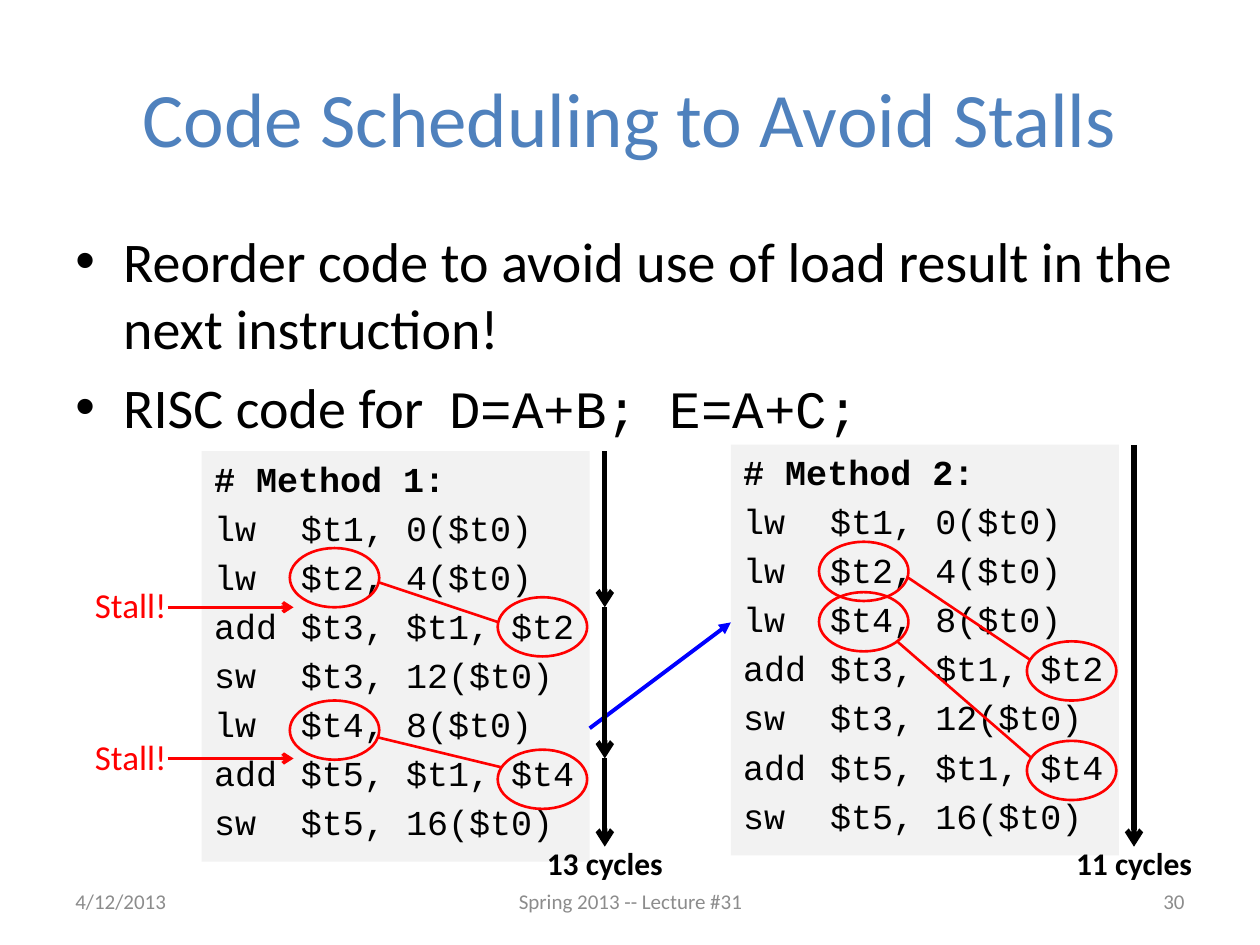
from dataclasses import dataclass

from lxml import etree
from pptx import Presentation
from pptx.dml.color import RGBColor
from pptx.enum.shapes import MSO_CONNECTOR, MSO_SHAPE
from pptx.enum.text import MSO_ANCHOR, MSO_AUTO_SIZE, PP_ALIGN
from pptx.oxml.ns import qn
from pptx.util import Inches, Pt

STRAIGHT = MSO_CONNECTOR.STRAIGHT
RECTANGLE, OVAL = MSO_SHAPE.RECTANGLE, MSO_SHAPE.OVAL
TOP, MIDDLE = MSO_ANCHOR.TOP, MSO_ANCHOR.MIDDLE
LEFT, CENTER, RIGHT = PP_ALIGN.LEFT, PP_ALIGN.CENTER, PP_ALIGN.RIGHT
FIT_SHAPE = MSO_AUTO_SIZE.SHAPE_TO_FIT_TEXT

CELL = Inches(0.1)
COLUMNS, ROWS = 100, 75
BODY_FONT, CODE_FONT = "Calibri", "Courier New"
BLACK, RED, BLUE = "000000", "FF0000", "0000FF"
TITLE_BLUE, FOOTER_GRAY, PANEL_GRAY = "4F81BD", "8C8C8C", "F2F2F2"


@dataclass(frozen=True)
class Area:
    col: float
    row: float
    cols: float
    rows: float

    def lengths(self) -> list[int]:
        return [round(n * CELL) for n in (self.col, self.row, self.cols, self.rows)]


@dataclass(frozen=True)
class Span:
    text: str
    size: float
    color: str = BLACK
    font: str = BODY_FONT
    bold: bool = False


@dataclass(frozen=True)
class Line:
    start: tuple[float, float]
    end: tuple[float, float]
    color: str
    width: float
    head: str = ""


@dataclass(frozen=True)
class Listing:
    title: str
    col: float
    row: float
    instructions: list[str]


@dataclass(frozen=True)
class Dependency:
    load: tuple[float, float]
    use: tuple[float, float]
    start: tuple[float, float]
    end: tuple[float, float]


def rgb(color: str) -> RGBColor:
    return RGBColor.from_string(color)


def add_spans(paragraph, spans: list[Span], align=LEFT) -> None:
    paragraph.alignment = align
    for span in spans:
        run = paragraph.add_run()
        run.text = span.text
        run.font.size = Pt(span.size)
        run.font.name = span.font
        run.font.bold = span.bold
        run.font.color.rgb = rgb(span.color)


def space_before(paragraph, percent: int):
    properties = paragraph._p.get_or_add_pPr()
    spacing = etree.SubElement(properties, qn("a:spcBef"))
    etree.SubElement(spacing, qn("a:spcPct")).set("val", str(percent * 1000))
    return properties


def fill_paragraphs(frame, rows: list[list[Span]]) -> list:
    paragraphs = []
    for index, spans in enumerate(rows):
        paragraph = frame.add_paragraph() if index else frame.paragraphs[0]
        add_spans(paragraph, spans)
        paragraphs.append(paragraph)
    return paragraphs


def draw_text(slide, area: Area, span: Span, align=LEFT, anchor=TOP, wrap: bool = True) -> None:
    frame = slide.shapes.add_textbox(*area.lengths()).text_frame
    frame.word_wrap = wrap
    frame.vertical_anchor = anchor
    add_spans(frame.paragraphs[0], [span], align)


def draw_bullets(slide, area: Area, items: list[list[Span]]) -> None:
    frame = slide.shapes.add_textbox(*area.lengths()).text_frame
    frame.word_wrap = True
    for paragraph in fill_paragraphs(frame, items):
        properties = space_before(paragraph, 20)
        properties.set("marL", str(Inches(0.38)))
        properties.set("indent", str(-Inches(0.38)))
        etree.SubElement(properties, qn("a:buFont")).set("typeface", "Arial")
        etree.SubElement(properties, qn("a:buChar")).set("char", "•")


def draw_listing(slide, listing: Listing) -> None:
    area = Area(listing.col, listing.row, 30.8, 32.6)
    panel = slide.shapes.add_shape(RECTANGLE, *area.lengths())
    panel.shadow.inherit = False
    panel.fill.solid()
    panel.fill.fore_color.rgb = rgb(PANEL_GRAY)
    panel.line.fill.background()
    frame = panel.text_frame
    frame.word_wrap = False
    frame.auto_size = FIT_SHAPE
    frame.vertical_anchor = TOP
    heading = [Span(listing.title, 20, font=CODE_FONT, bold=True)]
    code = [[Span(text, 20, font=CODE_FONT)] for text in listing.instructions]
    for paragraph in fill_paragraphs(frame, [heading] + code):
        tabs = etree.SubElement(space_before(paragraph, 20), qn("a:tabLst"))
        tab = etree.SubElement(tabs, qn("a:tab"))
        tab.set("pos", str(Inches(0.69)))
        tab.set("algn", "l")


def draw_line(slide, line: Line) -> None:
    ends = [round(n * CELL) for n in line.start + line.end]
    connector = slide.shapes.add_connector(STRAIGHT, *ends)
    connector.line.color.rgb = rgb(line.color)
    connector.line.width = Pt(line.width)
    if line.head:
        outline = connector.line._get_or_add_ln()
        etree.SubElement(outline, qn("a:tailEnd")).set("type", line.head)
    etree.SubElement(connector._element.spPr, qn("a:effectLst"))


def draw_dependency(slide, dependency: Dependency) -> None:
    for corner in (dependency.load, dependency.use):
        ring = slide.shapes.add_shape(OVAL, *Area(*corner, 7.1, 4.7).lengths())
        ring.shadow.inherit = False
        ring.fill.background()
        ring.line.color.rgb = rgb(RED)
        ring.line.width = Pt(1.5)
    draw_line(slide, Line(dependency.start, dependency.end, RED, 1.5))


def draw_stall(slide, row: float) -> None:
    draw_text(slide, Area(6, row - 2.35, 8.2, 4.4), Span("Stall!", 20, RED), RIGHT)
    draw_line(slide, Line((13.3, row), (23.3, row), RED, 2, "arrow"))


def draw_timeline(slide, col: float, stops: list[float], label: str) -> None:
    for top, bottom in zip(stops, stops[1:]):
        draw_line(slide, Line((col, top), (col, bottom), BLACK, 3, "arrow"))
    draw_text(slide, Area(col - 5.6, 66.5, 11.2, 4), Span(label, 18, bold=True), CENTER, wrap=False)


IN_ORDER = ["lw\t$t1, 0($t0)", "lw\t$t2, 4($t0)", "add\t$t3, $t1, $t2", "sw\t$t3, 12($t0)",
            "lw\t$t4, 8($t0)", "add\t$t5, $t1, $t4", "sw\t$t5, 16($t0)"]
REORDERED = [IN_ORDER[step] for step in (0, 1, 4, 2, 3, 5, 6)]
LISTINGS = [Listing("# Method 1:", 16, 35.8, IN_ORDER),
            Listing("# Method 2:", 58, 35.3, REORDERED)]
BULLETS = [[Span("Reorder code to avoid use of load result in the next instruction!", 32)],
           [Span("RISC code for  ", 32), Span("D=A+B; E=A+C;", 30, font=CODE_FONT)]]
DEPENDENCIES = [
    Dependency((23, 43.5), (39.5, 47.4), (30, 46.2), (39.6, 49.4)),
    Dependency((23, 55.6), (39.5, 59.5), (29.9, 58.5), (39.8, 60.9)),
    Dependency((65, 43), (81.5, 50.9), (72, 45.8), (81.8, 52.4)),
    Dependency((65, 47), (81.5, 58.8), (71.2, 50.9), (81.8, 60.1)),
]
STALL_ROWS = [48.2, 60.2]
FINISH_ROW = 67.2
FOOTERS = [(5, 23.3, "4/12/2013", LEFT),
           (34.2, 31.7, "Spring 2013 -- Lecture #31", CENTER),
           (71.7, 23.3, "30", RIGHT)]


def main() -> None:
    deck = Presentation()
    deck.slide_width, deck.slide_height = COLUMNS * CELL, ROWS * CELL
    slide = deck.slides.add_slide(deck.slide_layouts[6])
    title = Span("Code Scheduling to Avoid Stalls", 44, TITLE_BLUE)
    draw_text(slide, Area(5, 3, 90, 12.5), title, CENTER, MIDDLE)
    draw_bullets(slide, Area(5, 17.5, 90, 20.2), BULLETS)
    for listing in LISTINGS:
        draw_listing(slide, listing)
    draw_line(slide, Line((46.8, 57.8), (58, 49.4), BLUE, 2.25, "triangle"))
    for dependency in DEPENDENCIES:
        draw_dependency(slide, dependency)
    for row in STALL_ROWS:
        draw_stall(slide, row)
    draw_timeline(slide, 48, [LISTINGS[0].row, *STALL_ROWS, FINISH_ROW], "13 cycles")
    draw_timeline(slide, 90, [LISTINGS[1].row, FINISH_ROW], "11 cycles")
    for col, cols, text, align in FOOTERS:
        draw_text(slide, Area(col, 69.5, cols, 4), Span(text, 12, FOOTER_GRAY), align, MIDDLE)
    deck.save("out.pptx")


if __name__ == "__main__":
    main()
